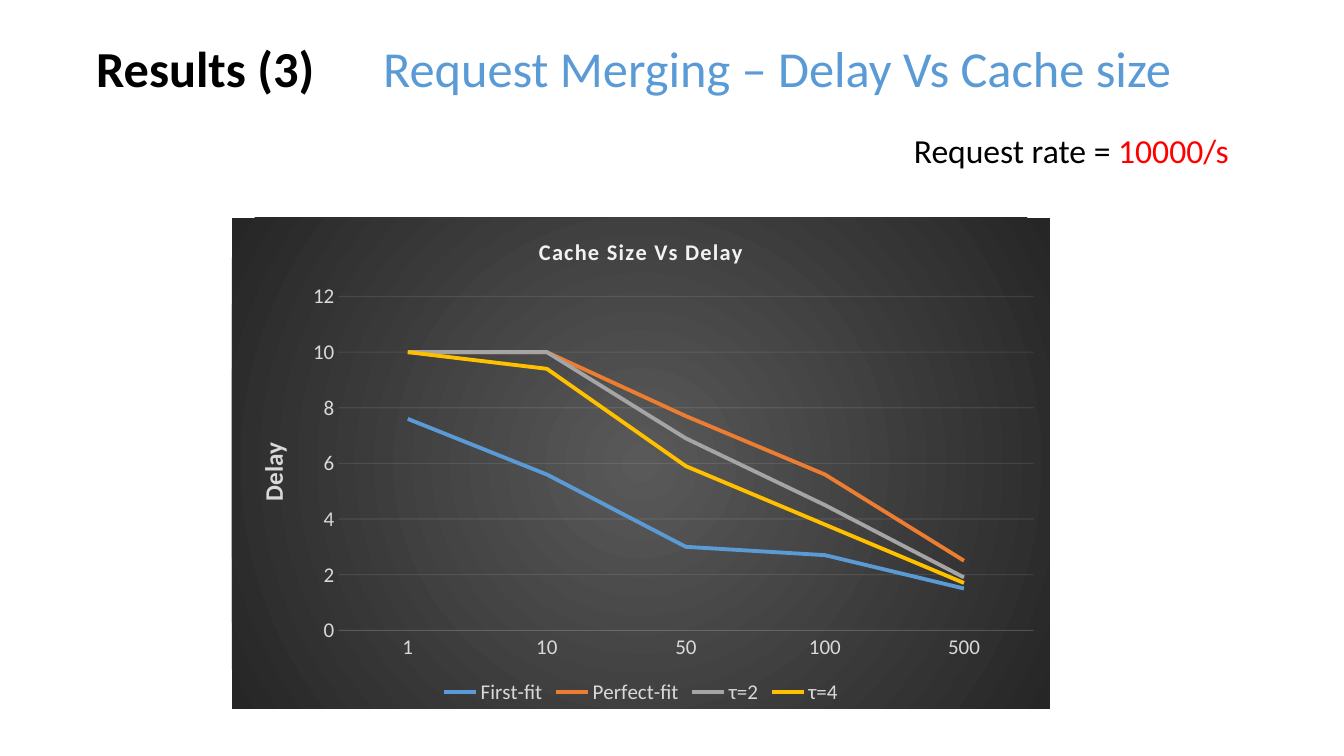
from pptx import Presentation
from pptx import util as u
from pptx.chart.data import CategoryChartData
from pptx.dml.color import RGBColor
from pptx.enum import chart as ch, text
from pptx.oxml import parse_xml
from pptx.oxml.ns import nsdecls, qn

FONT = "Calibri"
LABEL, PALE = "D9D9D9", "F2F2F2"
CATEGORIES = ["1", "10", "50", "100", "500"]
SERIES = [
    ("First-fit", "5B9BD5", (7.6, 5.6, 3, 2.7, 1.5)),
    ("Perfect-fit", "ED7D31", (10, 10, 7.7, 5.6, 2.5)),
    ("τ=2", "A5A5A5", (10, 10, 6.9, 4.5, 1.9)),
    ("τ=4", "FFC000", (10, 9.4, 5.9, 3.8, 1.7)),
]


def px(n):
    return u.Emu(round(n * 914400 / 100.8))


def rgb(value):
    return RGBColor.from_string(value)


def style(font, size, color, bold=False):
    font.name, font.size, font.bold = FONT, u.Pt(size), bold
    font.color.rgb = rgb(color)


def write_runs(tf, size, runs):
    """Fill the first paragraph with (text, color, bold) runs."""
    p = tf.paragraphs[0]
    p.alignment = text.PP_ALIGN.LEFT
    for words, color, bold in runs:
        r = p.add_run()
        r.text = words
        style(r.font, size, color, bold)
    return p


def add_title(slide):
    sp = slide.shapes.title
    sp.left, sp.top, sp.width, sp.height = px(86), px(31), px(1131), px(72)
    tf = sp.text_frame
    tf.vertical_anchor = text.MSO_ANCHOR.MIDDLE
    p = write_runs(tf, 36, [
        ("Results (3)\t", "000000", True),
        ("Request Merging – Delay Vs Cache size", "5B9BD5", False),
    ])
    p.runs[0].font.bold = True
    p.line_spacing = 1.0
    pPr = p.runs[0]._r.getparent().get_or_add_pPr()
    pPr.append(parse_xml(
        f'<a:tabLst {nsdecls("a")}><a:tab pos="{px(287)}" algn="l"/></a:tabLst>'))


def add_rate(slide):
    sp = slide.shapes.add_textbox(px(904), px(125), px(385), px(50))
    sp.text_frame.word_wrap = True
    write_runs(sp.text_frame, 24, [
        ("Request rate = ", "000000", False),
        ("10000/s", "FF0000", False),
    ])


def set_heading(tf, words, size, color):
    tf.text = words
    font = tf.paragraphs[0].runs[0].font
    style(font, size, color, True)
    return font


def thin_line(line):
    line.color.rgb = rgb(PALE)
    line.width = u.Pt(0.75)


def style_axes(chart):
    cat, val = chart.category_axis, chart.value_axis
    for axis in (cat, val):
        axis.major_tick_mark = axis.minor_tick_mark = ch.XL_TICK_MARK.NONE
        style(axis.tick_labels.font, 15, LABEL)
    thin_line(cat.format.line)
    val.format.line.fill.background()
    val.minimum_scale, val.maximum_scale, val.major_unit = 0, 12, 2
    val.has_major_gridlines = True
    thin_line(val.major_gridlines.format.line)
    set_heading(val.axis_title.text_frame, "Delay", 18, LABEL)
    for clr in chart.element.xpath(f'.//a:ln//a:srgbClr[@val="{PALE}"]'):
        clr.append(parse_xml(f'<a:alpha {nsdecls("a")} val="10000"/>'))


def fill_background(chart):
    """Give the chart area a radial dark gradient."""
    chart.element.find(qn("c:chart")).addnext(parse_xml(
        f'<c:spPr {nsdecls("c", "a")}><a:gradFill><a:gsLst>'
        '<a:gs pos="0"><a:srgbClr val="595959"/></a:gs>'
        '<a:gs pos="100000"><a:srgbClr val="262626"/></a:gs></a:gsLst>'
        '<a:path path="circle">'
        '<a:fillToRect l="50000" t="50000" r="50000" b="50000"/></a:path>'
        '</a:gradFill><a:ln><a:noFill/></a:ln></c:spPr>'))


def place_plot(chart, **box):
    """Fix the inner plot area, in fractions of the chart."""
    plot_area = chart.element.find(".//" + qn("c:plotArea"))
    for old in plot_area.findall(qn("c:layout")):
        plot_area.remove(old)
    modes = '<c:xMode val="edge"/><c:yMode val="edge"/>'
    sizes = "".join(f'<c:{k} val="{v}"/>' for k, v in box.items())
    plot_area.insert(0, parse_xml(
        f'<c:layout {nsdecls("c")}><c:manualLayout>'
        f'<c:layoutTarget val="inner"/>{modes}{sizes}'
        '</c:manualLayout></c:layout>'))


def add_delay_chart(slide):
    data = CategoryChartData()
    data.categories = CATEGORIES
    for name, _, values in SERIES:
        data.add_series(name, values)
    chart = slide.shapes.add_chart(
        ch.XL_CHART_TYPE.LINE, px(232), px(218), px(818), px(491), data).chart
    style(chart.font, 10, "000000")
    chart.plots[0].vary_by_categories = False
    for series, (_, color, _) in zip(chart.plots[0].series, SERIES):
        series.smooth = False
        series.marker.style = ch.XL_MARKER_STYLE.NONE
        series.format.line.color.rgb = rgb(color)
        series.format.line.width = u.Pt(2.75)
    style_axes(chart)
    chart.has_title = True
    chart.chart_title.include_in_layout = False
    font = set_heading(chart.chart_title.text_frame, "Cache Size Vs Delay", 16, PALE)
    font._element.set("spc", "100")
    chart.has_legend = True
    chart.legend.position = ch.XL_LEGEND_POSITION.BOTTOM
    chart.legend.include_in_layout = False
    style(chart.legend.font, 15, LABEL)
    fill_background(chart)
    place_plot(chart, x=0.13, y=0.16, w=0.85, h=0.68)


def main():
    prs = Presentation()
    prs.slide_width, prs.slide_height = px(1344), px(756)
    slide = prs.slides.add_slide(prs.slide_layouts[5])
    add_delay_chart(slide)
    add_title(slide)
    add_rate(slide)
    prs.save("out.pptx")


if __name__ == "__main__":
    main()
